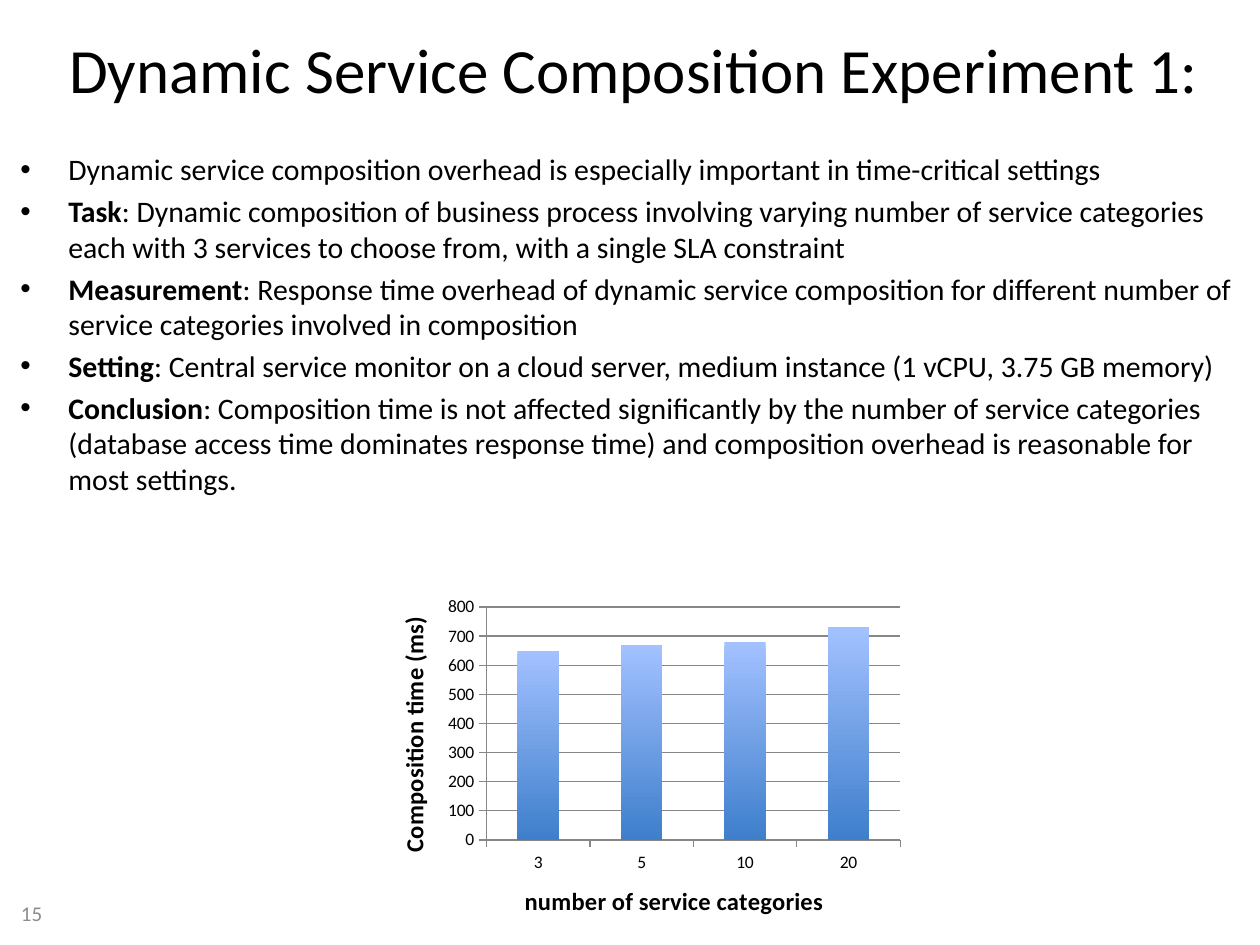
from dataclasses import dataclass

import pptx
import pptx.chart.data
import pptx.dml.color
import pptx.enum.chart
import pptx.enum.text
import pptx.util
from lxml import etree

EMU_PER_PX = 914400 / 126
FONT = "Calibri"
BLACK = "000000"
GRID_GREY = "878787"
NUMBER_GREY = "8C8C8C"
BAR_TOP = "A3C1FF"
BAR_BOTTOM = "3E7FCC"


@dataclass(frozen=True)
class Box:
    left: int
    top: int
    width: int
    height: int

    def emu(self) -> tuple:
        return tuple(px(v) for v in (self.left, self.top, self.width, self.height))


@dataclass(frozen=True)
class Point:
    lead: str
    text: str


POINTS = [
    Point("", "Dynamic service composition overhead is especially important in time-critical settings"),
    Point("Task", ": Dynamic composition of business process involving varying number of service "
          "categories each with 3 services to choose from, with a single SLA constraint"),
    Point("Measurement", ": Response time overhead of dynamic service composition for different "
          "number of service categories involved in composition"),
    Point("Setting", ": Central service monitor on a cloud server, medium instance "
          "(1 vCPU, 3.75 GB memory)"),
    Point("Conclusion", ": Composition time is not affected significantly by the number of service "
          "categories (database access time dominates response time) and composition overhead is "
          "reasonable for most settings."),
]
COMPOSITION_TIMES = {"3": 650, "5": 670, "10": 680, "20": 730}


def px(length: int) -> int:
    return round(length * EMU_PER_PX)


def rgb(hex_colour: str) -> pptx.dml.color.RGBColor:
    return pptx.dml.color.RGBColor.from_string(hex_colour)


def set_font(font, size: int, colour: str = BLACK) -> None:
    font.name = FONT
    font.size = pptx.util.Pt(size)
    font.color.rgb = rgb(colour)


def place_title(slide, box: Box, text: str) -> None:
    title = slide.shapes.title
    title.left, title.top, title.width, title.height = box.emu()
    frame = title.text_frame
    frame.text = text
    frame.vertical_anchor = pptx.enum.text.MSO_ANCHOR.MIDDLE
    frame.paragraphs[0].alignment = pptx.enum.text.PP_ALIGN.CENTER
    set_font(frame.paragraphs[0].font, 36)


def add_bullet(paragraph, indent: int) -> None:
    properties = paragraph._p.get_or_add_pPr()
    properties.set("marL", str(px(indent)))
    properties.set("indent", str(-px(indent)))
    namespace = properties.nsmap["a"]
    bullet_font = etree.Element(f"{{{namespace}}}buFont", typeface="Arial")
    bullet = etree.Element(f"{{{namespace}}}buChar", char="•")
    properties.find(f"{{{namespace}}}spcBef").addnext(bullet_font)
    bullet_font.addnext(bullet)


def add_points(slide, box: Box, points: list[Point]) -> None:
    frame = slide.shapes.add_textbox(*box.emu()).text_frame
    frame.word_wrap = True
    for index, point in enumerate(points):
        paragraph = frame.add_paragraph() if index else frame.paragraphs[0]
        paragraph.space_before = pptx.util.Pt(3.4)
        add_bullet(paragraph, 48)
        set_font(paragraph.font, 17)
        if point.lead:
            lead = paragraph.add_run()
            lead.text = point.lead
            lead.font.bold = True
        paragraph.add_run().text = point.text


def style_axis(axis, title: str) -> None:
    heading = axis.axis_title.text_frame
    heading.text = title
    set_font(heading.paragraphs[0].font, 14)
    heading.paragraphs[0].font.bold = True
    axis.major_tick_mark = pptx.enum.chart.XL_TICK_MARK.OUTSIDE
    axis.format.line.color.rgb = rgb(GRID_GREY)
    set_font(axis.tick_labels.font, 10)


def add_time_chart(slide, box: Box, times: dict[str, int]) -> None:
    data = pptx.chart.data.CategoryChartData()
    data.categories = list(times)
    data.add_series("Series 1", list(times.values()))
    chart = slide.shapes.add_chart(
        pptx.enum.chart.XL_CHART_TYPE.COLUMN_CLUSTERED, *box.emu(), data).chart
    set_font(chart.font, 10)
    chart.has_legend = False
    chart.has_title = False
    style_axis(chart.category_axis, "number of service categories")
    times_axis = chart.value_axis
    style_axis(times_axis, "Composition time (ms)")
    times_axis.minimum_scale = 0
    times_axis.maximum_scale = 800
    times_axis.major_unit = 100
    times_axis.has_major_gridlines = True
    times_axis.major_gridlines.format.line.color.rgb = rgb(GRID_GREY)
    plot = chart.plots[0]
    plot.gap_width = 150
    plot.vary_by_categories = False
    fill = plot.series[0].format.fill
    fill.gradient()
    fill.gradient_angle = 270
    for stop, colour in zip(fill.gradient_stops, (BAR_TOP, BAR_BOTTOM)):
        stop.color.rgb = rgb(colour)


def add_page_number(slide, box: Box, number: str) -> None:
    frame = slide.shapes.add_textbox(*box.emu()).text_frame
    frame.word_wrap = True
    frame.vertical_anchor = pptx.enum.text.MSO_ANCHOR.MIDDLE
    frame.text = number
    frame.paragraphs[0].alignment = pptx.enum.text.PP_ALIGN.CENTER
    set_font(frame.paragraphs[0].font, 12, NUMBER_GREY)


def main() -> None:
    deck = pptx.Presentation()
    deck.slide_width, deck.slide_height = px(1260), px(945)
    slide = deck.slides.add_slide(deck.slide_layouts[5])
    place_title(slide, Box(8, 10, 1252, 116), "Dynamic Service Composition Experiment 1:")
    add_points(slide, Box(8, 145, 1242, 435), POINTS)
    add_time_chart(slide, Box(370, 590, 541, 355), COMPOSITION_TIMES)
    add_page_number(slide, Box(4, 892, 55, 42), "15")
    deck.save("out.pptx")


if __name__ == "__main__":
    main()
